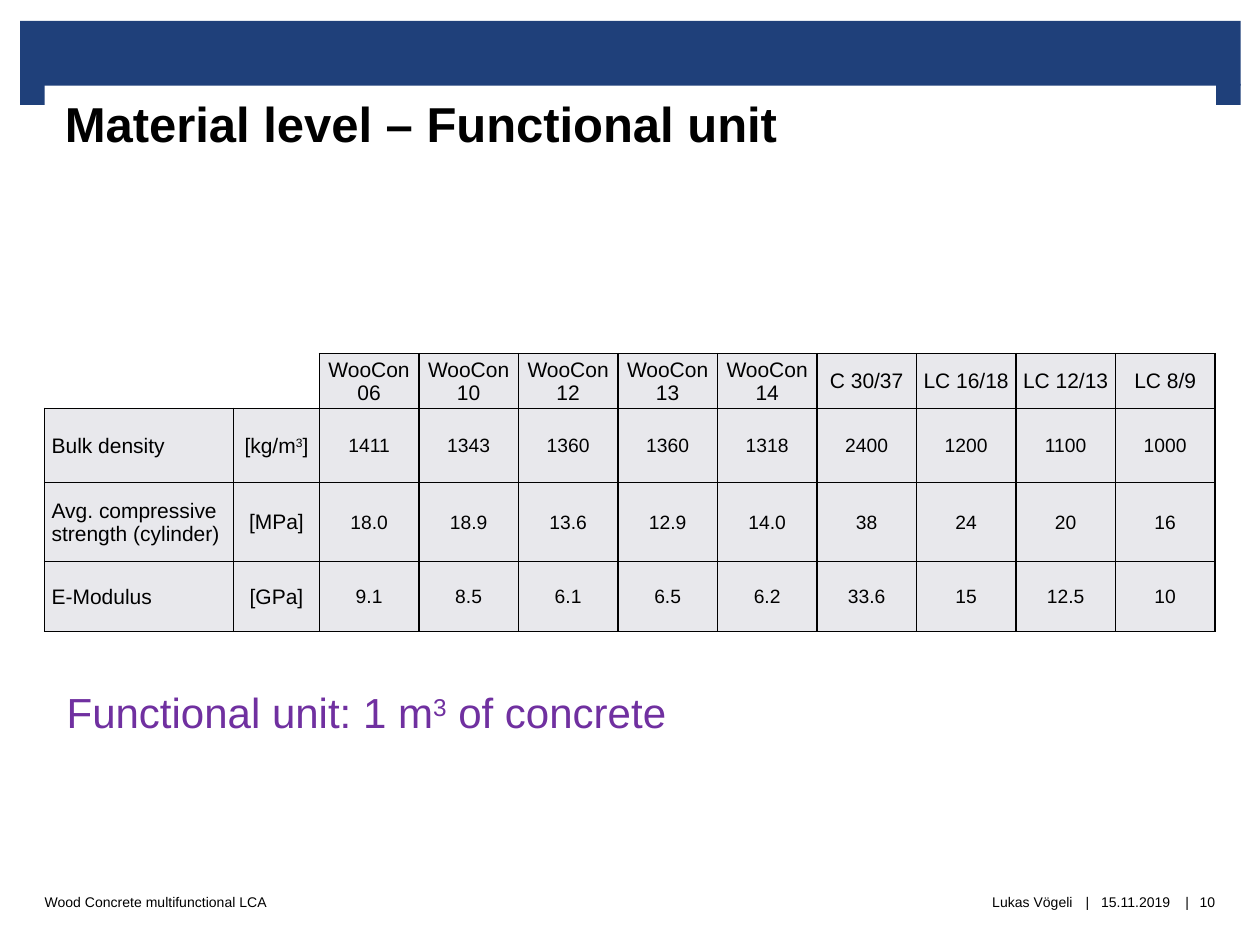
from lxml.etree import SubElement
from pptx import Presentation
from pptx.dml.color import RGBColor
from pptx.enum.shapes import MSO_SHAPE
from pptx.enum.text import MSO_ANCHOR, MSO_AUTO_SIZE, PP_ALIGN
from pptx.oxml.ns import qn
from pptx.util import Pt

NAVY = RGBColor(0x1F, 0x40, 0x7A)
BLACK = RGBColor(0, 0, 0)
WHITE = RGBColor(0xFF, 0xFF, 0xFF)
GRAY = RGBColor(0xE8, 0xE8, 0xEC)
PURPLE = RGBColor(0x70, 0x30, 0xA0)
FONT = "Arial"

HEADERS = ["WooCon 06", "WooCon 10", "WooCon 12", "WooCon 13", "WooCon 14",
           "C 30/37", "LC 16/18", "LC 12/13", "LC 8/9"]
TABLE_ROWS = [
    ["", ""] + HEADERS,
    ["Bulk density", "[kg/m^3^]",
     "1411", "1343", "1360", "1360", "1318", "2400", "1200", "1100", "1000"],
    ["Avg. compressive\nstrength (cylinder)", "[MPa]",
     "18.0", "18.9", "13.6", "12.9", "14.0", "38", "24", "20", "16"],
    ["E-Modulus", "[GPa]",
     "9.1", "8.5", "6.1", "6.5", "6.2", "33.6", "15", "12.5", "10"],
]
LABEL_WIDTH, UNIT_WIDTH = 108, 49
ROW_HEIGHTS = [31.4, 42.3, 45.1, 40]


def write_text(text_frame, text, size, color=BLACK, alignment=PP_ALIGN.LEFT, bold=False):
    for index, line in enumerate(text.split("\n")):
        paragraph = text_frame.add_paragraph() if index else text_frame.paragraphs[0]
        paragraph.alignment = alignment
        for part_index, part in enumerate(line.split("^")):
            run = paragraph.add_run()
            run.text = part
            run.font.name = FONT
            run.font.size = Pt(size)
            run.font.bold = bold
            run.font.color.rgb = color
            if part_index % 2:
                run.font._element.set("baseline", "30000")


def set_margins(text_frame, left, top, right, bottom):
    text_frame.margin_left, text_frame.margin_top = Pt(left), Pt(top)
    text_frame.margin_right, text_frame.margin_bottom = Pt(right), Pt(bottom)


def add_banner(slide, left, top, width, height):
    bar_height, foot_width = 37, 14
    foot_top, foot_height = top + bar_height - 1, height - bar_height + 1
    for box in [(left, top, width, bar_height),
                (left, foot_top, foot_width, foot_height),
                (left + width - foot_width, foot_top, foot_width, foot_height)]:
        shape = slide.shapes.add_shape(MSO_SHAPE.RECTANGLE, *map(Pt, box))
        shape.shadow.inherit = False
        shape.fill.solid()
        shape.fill.fore_color.rgb = NAVY
        shape.line.fill.background()


def place_title(slide, left, top, width, height):
    title = slide.shapes.title
    title.left, title.top, title.width, title.height = map(Pt, (left, top, width, height))
    title.fill.solid()
    title.fill.fore_color.rgb = WHITE
    text_frame = title.text_frame
    text_frame.auto_size = MSO_AUTO_SIZE.NONE
    text_frame.vertical_anchor = MSO_ANCHOR.TOP
    set_margins(text_frame, 11.5, 4.5, 11.5, 0)
    write_text(text_frame, "Material level – Functional unit", 28, bold=True)


def set_border(cell, side, color):
    line = SubElement(cell._tc.get_or_add_tcPr(), qn(f"a:ln{side}"), w=str(Pt(1)))
    fill = SubElement(line, qn("a:solidFill"))
    SubElement(fill, qn("a:srgbClr"), val=str(color))


def format_cell(cell, row, column, text):
    is_blank = row == 0 and column < 2
    for side in "LRTB":
        is_inner = side == "B" or (side == "R" and column == 1)
        set_border(cell, side, WHITE if is_blank and not is_inner else BLACK)
    if is_blank:
        cell.fill.background()
        return
    cell.fill.solid()
    cell.fill.fore_color.rgb = GRAY
    cell.vertical_anchor = MSO_ANCHOR.MIDDLE
    set_margins(cell, 4 if column == 0 else 0.7, 0.7, 0.7, 0)
    write_text(cell.text_frame, text, 11 if row and column > 1 else 12,
               alignment=PP_ALIGN.CENTER if column else PP_ALIGN.LEFT)


def add_material_table(slide, left, top, width):
    column_count = len(TABLE_ROWS[0])
    frame = slide.shapes.add_table(len(TABLE_ROWS), column_count, Pt(left), Pt(top),
                                   Pt(width), Pt(sum(ROW_HEIGHTS)))
    table = frame.table
    table.first_row = table.horz_banding = False
    value_width = (width - LABEL_WIDTH - UNIT_WIDTH) / len(HEADERS)
    widths = [LABEL_WIDTH, UNIT_WIDTH] + [value_width] * len(HEADERS)
    for column, column_width in zip(table.columns, widths):
        column.width = Pt(column_width)
    for row_index, (values, height) in enumerate(zip(TABLE_ROWS, ROW_HEIGHTS)):
        table.rows[row_index].height = Pt(height)
        for column_index, text in enumerate(values):
            format_cell(table.cell(row_index, column_index), row_index, column_index, text)


def add_statement(slide, left, top, width, height):
    text_frame = slide.shapes.add_textbox(*map(Pt, (left, top, width, height))).text_frame
    text_frame.word_wrap = False
    text_frame.auto_size = MSO_AUTO_SIZE.SHAPE_TO_FIT_TEXT
    write_text(text_frame, "Functional unit: 1 m^3^ of concrete", 24, PURPLE)


def add_footer(slide, left, top, width, height):
    right = left + width
    parts = [
        ("Wood Concrete multifunctional LCA", left, 335, PP_ALIGN.LEFT),
        ("Lukas Vögeli", right - 334, 252.5, PP_ALIGN.RIGHT),
        ("|", right - 77.5, 9, PP_ALIGN.CENTER),
        ("15.11.2019", right - 69.5, 48, PP_ALIGN.CENTER),
        ("|", right - 20.5, 9, PP_ALIGN.CENTER),
        ("10", right - 15, 21, PP_ALIGN.CENTER),
    ]
    for text, part_left, part_width, alignment in parts:
        box = slide.shapes.add_textbox(Pt(part_left), Pt(top), Pt(part_width), Pt(height))
        text_frame = box.text_frame
        text_frame.word_wrap = True
        text_frame.vertical_anchor = MSO_ANCHOR.MIDDLE
        set_margins(text_frame, 0, 0, 0, 0)
        write_text(text_frame, text, 8, alignment=alignment)


def main():
    presentation = Presentation()
    presentation.slide_width, presentation.slide_height = Pt(720), Pt(540)
    slide = presentation.slides.add_slide(presentation.slide_layouts[5])
    place_title(slide, 25.5, 49, 669, 76)
    add_banner(slide, 11.5, 12, 697.5, 48)
    add_material_table(slide, 25.5, 202, 669)
    add_statement(slide, 31, 389, 361, 36)
    add_footer(slide, 25.5, 497, 669, 36.5)
    presentation.save("out.pptx")


if __name__ == "__main__":
    main()
